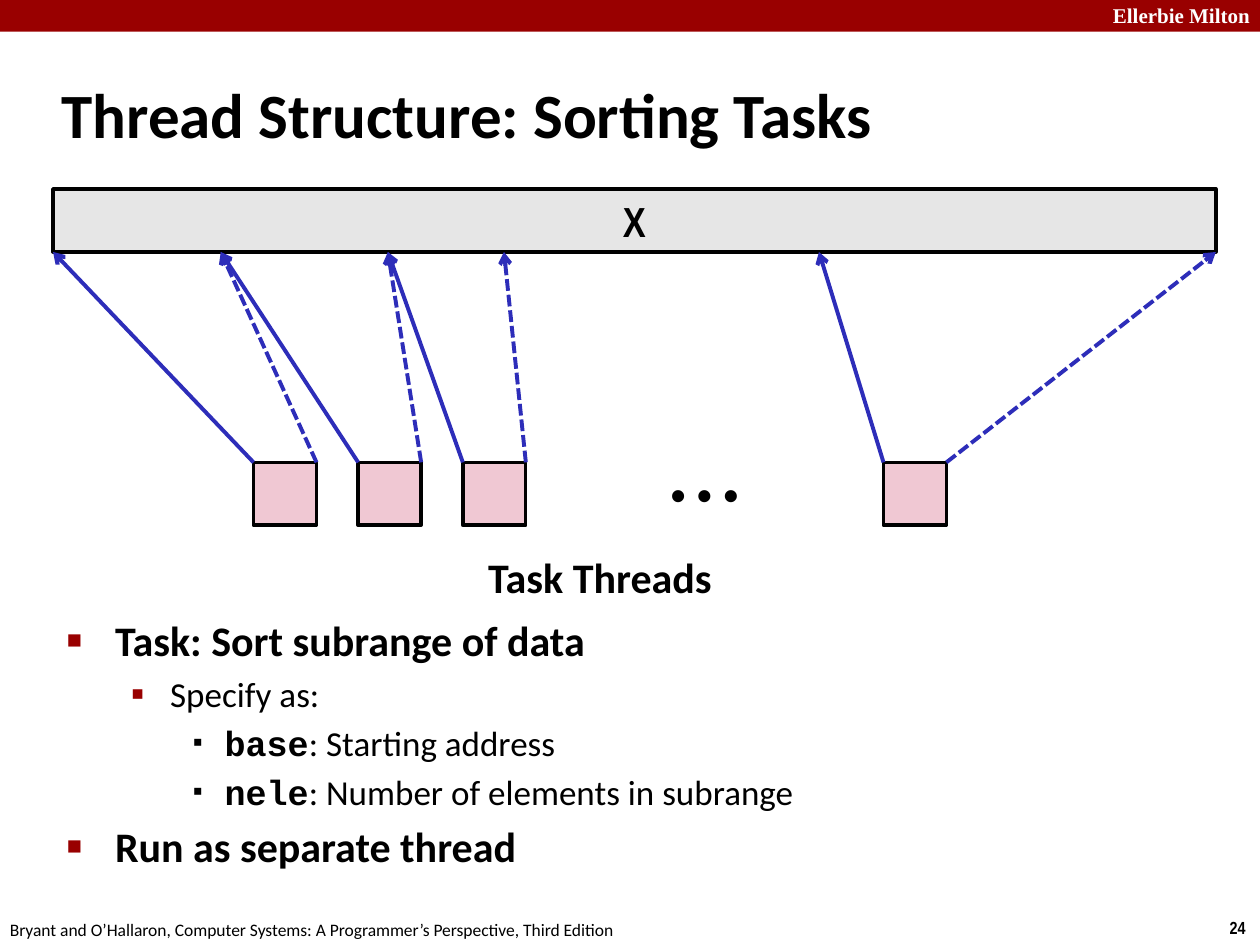
from lxml.etree import SubElement as Sub
from pptx import Presentation
from pptx.dml.color import RGBColor as Rgb
from pptx.enum.dml import MSO_LINE as Dash
from pptx.enum.shapes import MSO_CONNECTOR as Conn, MSO_SHAPE as Kind
from pptx.enum.text import MSO_ANCHOR as Anchor, PP_ALIGN as Align
from pptx.oxml.ns import qn
from pptx.util import Cm, Pt

HUES = {"red": "990000", "white": "FFFFFF", "black": "000000",
        "gray": "E6E6E6", "pink": "F0C8D3", "blue": "2D2DB9"}

LABEL = {"name": "Calibri", "size": Pt(24), "bold": True}
MARK = {"name": "Times New Roman", "size": Pt(12), "bold": True}
NOTE = {"name": "Calibri", "size": Pt(10), "bold": False}
PAGE = {"name": "Arial Narrow", "size": Pt(10), "bold": True}
TITLE = {**LABEL, "size": Pt(36)}
ARRAY = {**LABEL, "name": "Arial Narrow"}
DOTS = {**LABEL, "name": "Arial"}
PLAIN = {"name": "Calibri", "size": Pt(20), "bold": False}
CODE = {"name": "Courier New", "size": Pt(20), "bold": True}

# Per level: left margin and hanging indent in cm, glyph, colour, size in %
LEVELS = [(0.97, 0.97, "■", "red", 60),
          (2.08, 0.79, "▪", "red", 110),
          (3.18, 0.64, "▪", "black", 80)]
POINTS = [(0, [("Task: Sort subrange of data", LABEL)]),
          (1, [("Specify as:", PLAIN)]),
          (2, [("base", CODE), (": Starting address", PLAIN)]),
          (2, [("nele", CODE), (": Number of elements in subrange", PLAIN)]),
          (0, [("Run as separate thread", LABEL)])]


def hue(name):
    return Rgb.from_string(HUES[name])


def add_run(par, text, style, color="black"):
    run = par.add_run()
    run.text = text
    for key, value in style.items():
        setattr(run.font, key, value)
    run.font.color.rgb = hue(color)


def add_text(slide, box, text, style, color="black", wrap=False,
             align=Align.LEFT, anchor=Anchor.TOP):
    frame = slide.shapes.add_textbox(*map(Cm, box)).text_frame
    frame.word_wrap = wrap
    frame.vertical_anchor = anchor
    par = frame.paragraphs[0]
    par.alignment = align
    add_run(par, text, style, color)


def add_rect(slide, box, fill, edge=None):
    rect = slide.shapes.add_shape(Kind.RECTANGLE, *map(Cm, box))
    rect.shadow.inherit = False
    rect.fill.solid()
    rect.fill.fore_color.rgb = hue(fill)
    if edge:
        rect.line.color.rgb = hue(edge)
        rect.line.width = Pt(2)
    else:
        rect.line.fill.background()


def add_arrow(slide, start, end, dash=None):
    arrow = slide.shapes.add_connector(Conn.STRAIGHT, *map(Cm, start + end))
    arrow.line.color.rgb = hue("blue")
    arrow.line.width = Pt(2.25)
    if dash:
        arrow.line.dash_style = dash
    props = arrow.element.spPr
    Sub(props.find(qn("a:ln")), qn("a:tailEnd"), type="arrow")
    Sub(props, qn("a:effectLst"))


def set_bullet(par, level):
    margin, hang, glyph, color, size = LEVELS[level]
    par.level = level
    props = par._p.get_or_add_pPr()
    props.set("marL", str(Cm(margin)))
    props.set("indent", str(-Cm(hang)))
    Sub(Sub(props, qn("a:buClr")), qn("a:srgbClr"), val=HUES[color])
    Sub(props, qn("a:buSzPct"), val=str(size * 1000))
    Sub(props, qn("a:buFont"), typeface="Arial")
    Sub(props, qn("a:buChar"), char=glyph)


def add_header(slide, box):
    left, top, width, height = box
    add_rect(slide, box, "red")
    add_text(slide, (left + width - 3.58, top - 0.08, 3.63, 0.76),
             "Ellerbie Milton", MARK, "white", align=Align.RIGHT)


def add_footer(slide, box):
    left, top, width, height = box
    add_text(slide, (left + width - 0.86, top, 0.86, height), "24", PAGE)
    add_text(slide, (left - 0.05, top + 0.05, 12.9, height),
             "Bryant and O’Hallaron, Computer Systems: "
             "A Programmer’s Perspective, Third Edition", NOTE)


def add_diagram(slide, box):
    """Draw the array, the task threads and the subrange each one sorts."""
    left, top, width, height = box
    side, step = 1.27, 2.11
    row = top + 5.51
    floor = top + side
    middle = {"align": Align.CENTER, "anchor": Anchor.MIDDLE}
    # Offset of each task, then the start and end of its subrange
    tasks = [(4.04, 0, 3.38), (4.04 + step, 3.38, 6.75),
             (4.04 + 2 * step, 6.75, 9.09), (16.74, 15.44, width)]

    bar = (left, top, width, side)
    add_rect(slide, bar, "gray", "black")
    add_text(slide, bar, "X", ARRAY, **middle)
    for x, first, last in tasks:
        near, far = left + x, left + x + side
        add_rect(slide, (near, row, side, side), "pink", "black")
        add_arrow(slide, (near, row), (left + first, floor))
        add_arrow(slide, (far, row), (left + last, floor), Dash.SQUARE_DOT)

    gap = tasks[2][0] + side
    add_text(slide, (left + gap, row, tasks[3][0] - gap, side),
             "• • •", DOTS, **middle)
    span = tasks[3][0] + side - tasks[0][0]
    add_text(slide, (left + tasks[0][0], top + height - side, span, side),
             "Task Threads", LABEL, **middle)


def add_points(slide, box):
    frame = slide.shapes.add_textbox(*map(Cm, box)).text_frame
    frame.word_wrap = True
    for i, (level, runs) in enumerate(POINTS):
        par = frame.add_paragraph() if i else frame.paragraphs[0]
        par.space_before = Pt(4.8 if level == 0 else 4)
        set_bullet(par, level)
        for text, style in runs:
            add_run(par, text, style)


def main():
    deck = Presentation()
    deck.slide_width, deck.slide_height = Cm(25.4), Cm(19.05)
    slide = deck.slides.add_slide(deck.slide_layouts[6])
    add_header(slide, (0, 0, 25.4, 0.64))
    add_footer(slide, (0, 18.36, 25.4, 0.69))
    add_text(slide, (0.99, 1.22, 21.08, 2.11),
             "Thread Structure: Sorting Tasks", TITLE,
             wrap=True, anchor=Anchor.MIDDLE)
    add_points(slide, (1.1, 12.27, 21.95, 5.33))
    add_diagram(slide, (1.07, 3.81, 23.44, 8.46))
    deck.save("out.pptx")


if __name__ == "__main__":
    main()
